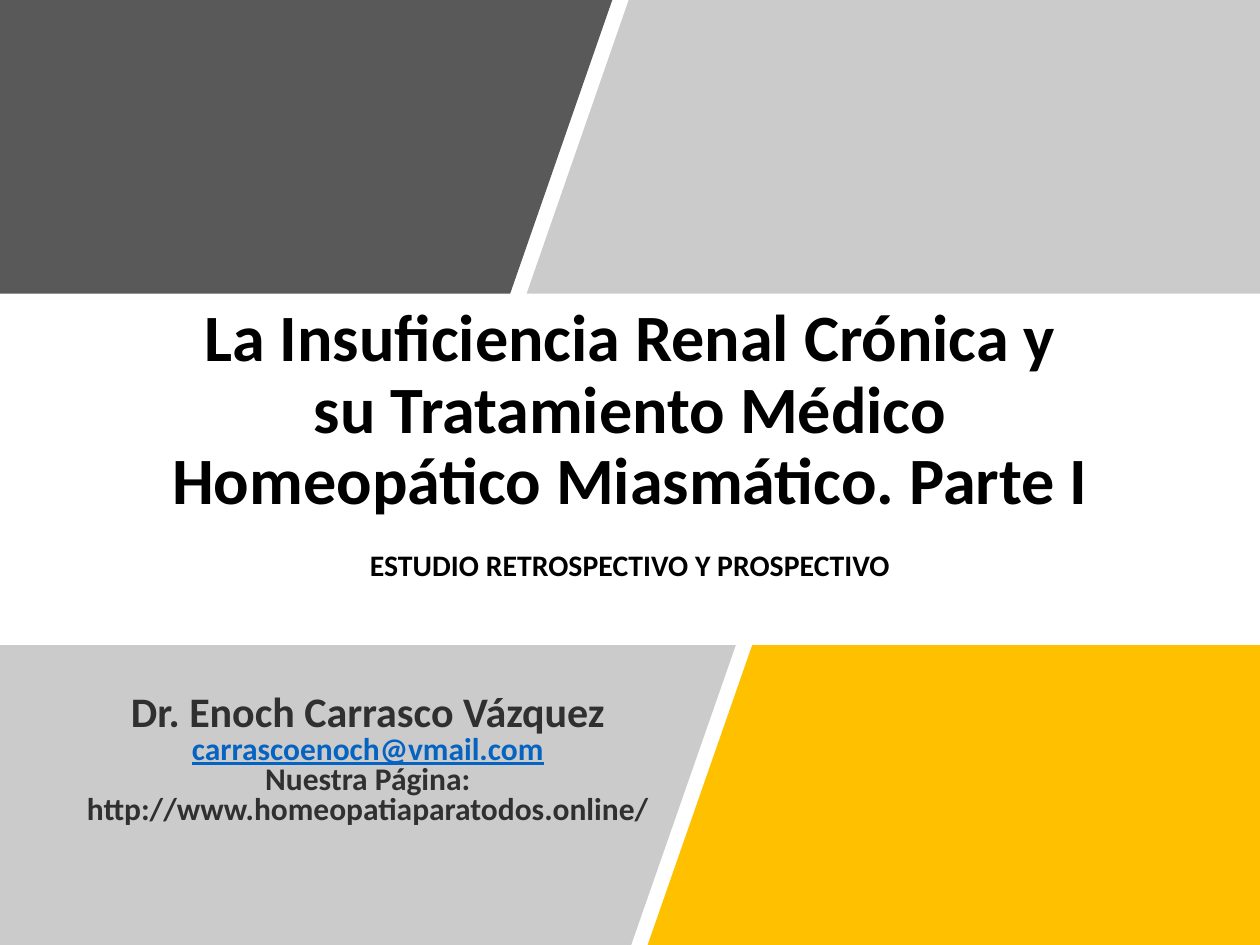
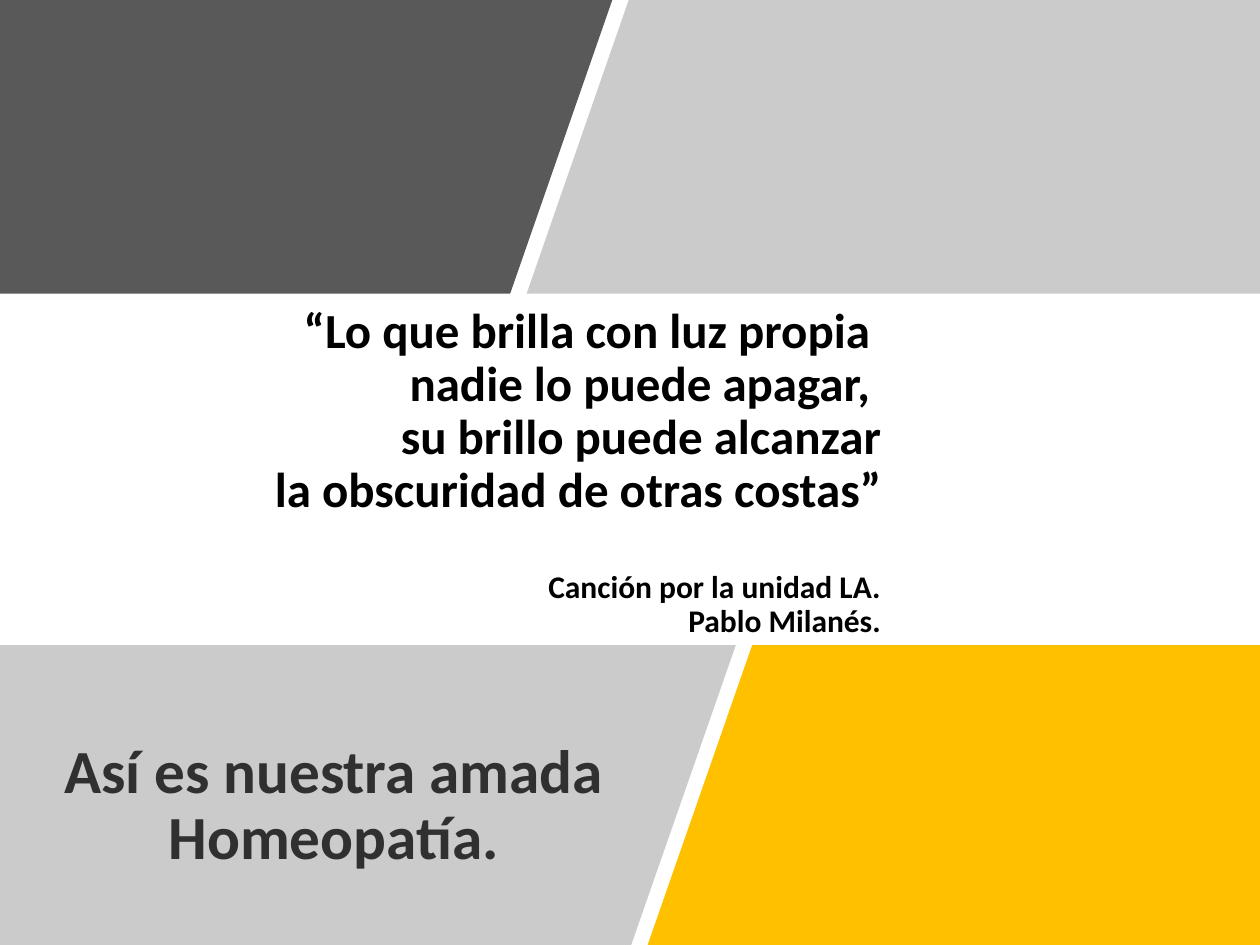
import pptx
import pptx.util
import pptx.dml.color
import pptx.enum.text
import pptx.oxml.ns
import lxml.etree

RGB = pptx.dml.color.RGBColor
ALIGN = pptx.enum.text.PP_ALIGN
ANCHOR = pptx.enum.text.MSO_ANCHOR

BLACK = RGB(0, 0, 0)
WHITE = RGB(255, 255, 255)
DARK = RGB(0x59, 0x59, 0x59)
GRAY = RGB(0x7F, 0x7F, 0x7F)
GOLD = RGB(0xFF, 0xC0, 0x00)
INK = RGB(0x30, 0x30, 0x30)
BLUE = RGB(0x05, 0x63, 0xC1)

COLS, ROWS = 10, 7.5
TOP, LOW = 2.33, 5.12
BANDS = [
    ([(0, 0), (4.86, 0), (4.05, TOP), (0, TOP)], DARK, None),
    ([(4.99, 0), (COLS, 0), (COLS, TOP), (4.18, TOP)], GRAY, 40),
    ([(5.87, LOW), (8.75, LOW), (8.75, ROWS), (5.04, ROWS)], WHITE, None),
    ([(5.97, LOW), (COLS, LOW), (COLS, ROWS), (5.14, ROWS)], GOLD, None),
    ([(0, LOW), (5.84, LOW), (5.01, ROWS), (0, ROWS)], GRAY, 40),
]


class Deck:
    """Hold the deck's style and the slide being built."""

    def __init__(self):
        self.prs = pptx.Presentation()
        self.prs.slide_width = pptx.util.Inches(10)
        self.prs.slide_height = pptx.util.Inches(7.5)
        self.unit = self.prs.slide_width / COLS
        self.font = "Calibri"
        self.slide = None

    def grid(self, *spots):
        return [round(spot * self.unit) for spot in spots]

    def page(self):
        self.slide = self.prs.slides.add_slide(self.prs.slide_layouts[6])
        fill = self.slide.background.fill
        fill.solid()
        fill.fore_color.rgb = WHITE

    def band(self, spots, color, alpha):
        first, *rest = [self.grid(*spot) for spot in spots]
        pen = self.slide.shapes.build_freeform(*first)
        pen.add_line_segments(rest, close=True)
        shape = pen.convert_to_shape()
        shape.shadow.inherit = False
        shape.line.fill.background()
        shape.fill.solid()
        shape.fill.fore_color.rgb = color
        if alpha:
            tag = pptx.oxml.ns.qn("a:srgbClr")
            node = next(shape.fill._xPr.iter(tag))
            lxml.etree.SubElement(node, pptx.oxml.ns.qn("a:alpha"), val=str(alpha * 1000))

    def bands(self):
        for spots, color, alpha in BANDS:
            self.band(spots, color, alpha)

    def text(self, place, lines, align=ALIGN.CENTER, space=0.9, anchor=ANCHOR.BOTTOM):
        frame = self.slide.shapes.add_textbox(*self.grid(*place)).text_frame
        frame.word_wrap = True
        frame.vertical_anchor = anchor
        frame.text = "\n".join(line[0] for line in lines)
        for para, (_, size, color, gap) in zip(frame.paragraphs, lines):
            para.alignment = align
            para.line_spacing = space
            para.space_before = pptx.util.Pt(gap)
            for run in para.runs:
                run.font.name = self.font
                run.font.size = pptx.util.Pt(size)
                run.font.bold = True
                run.font.color.rgb = color
                run.font.underline = color == BLUE


def main():
    deck = Deck()

    deck.page()
    title = "La Insuficiencia Renal Crónica y su Tratamiento Médico Homeopático Miasmático. Parte I"
    deck.text((1.25, 2.46, 7.5, 1.71), [(title, 37.8, BLACK, 0)])
    deck.text((1.25, 4.32, 7.5, 0.63),
              [("ESTUDIO RETROSPECTIVO Y PROSPECTIVO", 17, BLACK, 0)],
              anchor=ANCHOR.TOP)
    deck.bands()
    deck.text((0.15, 5.41, 5.54, 1.2), [
        ("Dr. Enoch Carrasco Vázquez", 24, INK, 0),
        ("carrascoenoch@vmail.com", 18, BLUE, 0),
        ("Nuestra Página: http://www.homeopatiaparatodos.online/", 18, INK, 0),
    ], space=0.8)

    deck.page()
    deck.text((-0.41, 3.41, 7.5, 1.71), [
        ("“Lo que brilla con luz propia ", 28, BLACK, 0),
        ("nadie lo puede apagar, ", 28, BLACK, 0),
        ("su brillo puede alcanzar", 28, BLACK, 0),
        ("la obscuridad de otras costas”", 28, BLACK, 0),
        ("Canción por la unidad LA.", 18, BLACK, 30),
        ("Pablo Milanés.", 18, BLACK, 0),
    ], align=ALIGN.RIGHT)
    deck.bands()
    deck.text((-0.12, 5.78, 5.54, 1.2),
              [("Así es nuestra amada Homeopatía.", 35, INK, 0)])

    deck.prs.save("out.pptx")


if __name__ == "__main__":
    main()
